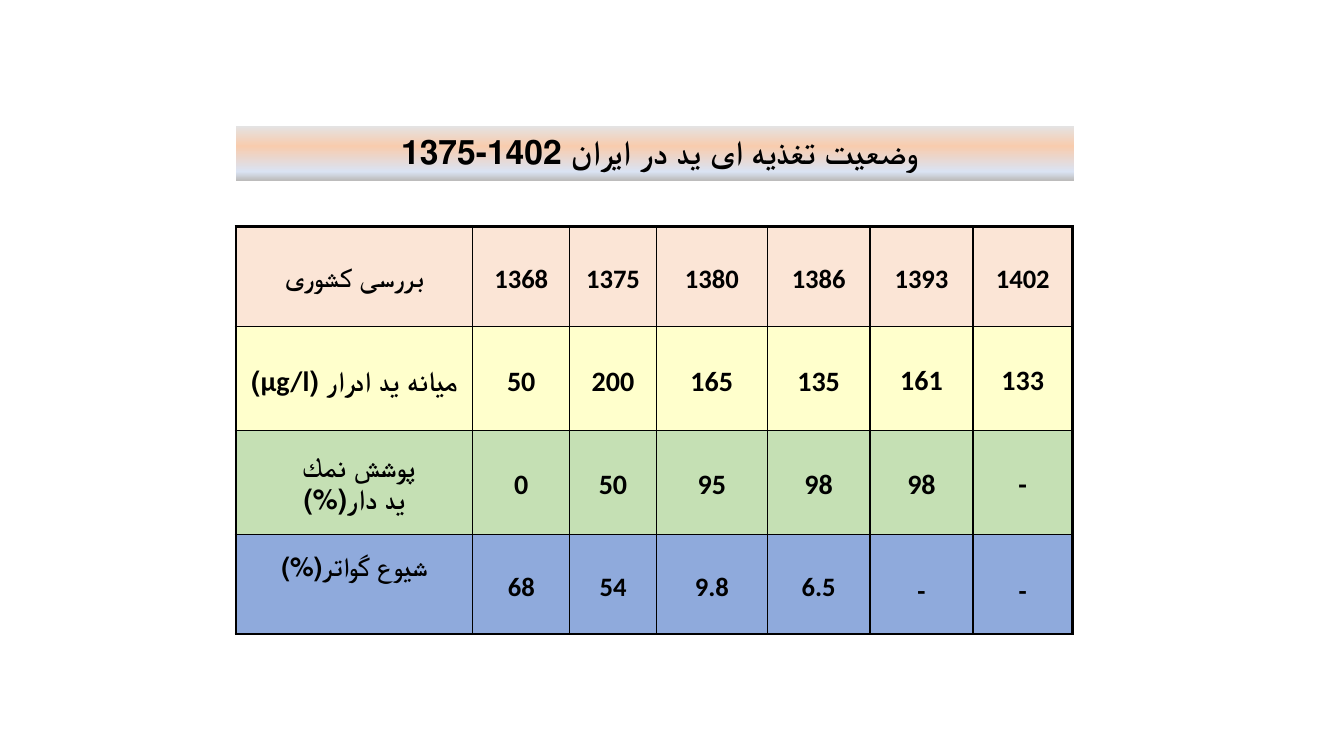
"""Build a slide with a titled table of iodine nutrition surveys in Iran."""
from lxml.etree import SubElement
from pptx import Presentation
from pptx.dml.color import RGBColor
from pptx.enum.shapes import MSO_SHAPE
from pptx.enum.text import MSO_ANCHOR, PP_ALIGN
from pptx.oxml.ns import qn
from pptx.util import Inches, Pt

COLORS = {
    "ink": "000000", "survey": "FBE5D6", "urine": "FFFFCC", "salt": "C5E0B4", "goitre": "8FAADC",
    "silver": "E4E3E3", "peach": "F8CCAE", "ice": "DAE3F3", "gray": "BDBCBC",
}
LEFT, WIDTH = 2.34, 8.31
COLUMNS = [2.35, 0.96, 0.86, 1.1, 1.02, 1.02, 0.99]
ROWS = [
    ("survey", 0.99, 19, ["بررسی کشوری", "1368", "1375", "1380", "1386", "1393", "1402"]),
    ("urine", 1.03, 20, ["ميانه يد ادرار (µg/l)", "50", "200", "165", "135", "161", "133"]),
    ("salt", 1.03, 20, ["پوشش نمك \nيد دار(%)", "0", "50", "95", "98", "98", "-"]),
    ("goitre", 0.99, 19, ["شيوع گواتر(%)", "68", "54", "9.8", "6.5", "-", "-"]),
]
THICK_VERTICALS = {0, 5, 6, 7}
THICK_HORIZONTALS = {0, len(ROWS)}


def write(frame, text, size, spacing, rtl):
    frame.text = text
    for para in frame.paragraphs:
        para.alignment = PP_ALIGN.CENTER
        para.line_spacing = spacing
        para.font.name, para.font.size, para.font.bold = "Calibri", Pt(size), True
        para.font.color.rgb = RGBColor.from_string(COLORS["ink"])
        for span in para.runs:
            span.font.name, span.font.size, span.font.bold = "Calibri", Pt(size), True
            span.font.color.rgb = RGBColor.from_string(COLORS["ink"])
        if rtl:
            para._p.get_or_add_pPr().set("rtl", "1")


def draw_border(cell, side, thick):
    line = SubElement(cell._tc.get_or_add_tcPr(), qn(f"a:ln{side}"), w=str(Pt(2.25 if thick else 1)))
    SubElement(SubElement(line, qn("a:solidFill")), qn("a:srgbClr"), val=COLORS["ink"])


deck = Presentation()
deck.slide_width, deck.slide_height = Inches(13.33), Inches(7.5)
page = deck.slides.add_slide(deck.slide_layouts[6])

height = sum(row[1] for row in ROWS)
table = page.shapes.add_table(
    len(ROWS), len(COLUMNS), Inches(LEFT), Inches(2.25), Inches(WIDTH), Inches(height)).table
for column, width in zip(table.columns, COLUMNS):
    column.width = Inches(width)

for r, (color, row_height, size, texts) in enumerate(ROWS):
    table.rows[r].height = Inches(row_height)
    for c, text in enumerate(texts):
        cell = table.cell(r, c)
        write(cell.text_frame, text, size, 1.15, c == 0 and r > 0)
        cell.vertical_anchor = MSO_ANCHOR.MIDDLE
        side_margin, top_margin = (0.04, 0.01) if c < 5 else (0, 0)
        cell.margin_left = cell.margin_right = Inches(side_margin)
        cell.margin_top, cell.margin_bottom = Inches(top_margin), 0
        for side, thick in (("L", c in THICK_VERTICALS), ("R", c + 1 in THICK_VERTICALS),
                            ("T", r in THICK_HORIZONTALS), ("B", r + 1 in THICK_HORIZONTALS)):
            draw_border(cell, side, thick)
        cell.fill.solid()
        cell.fill.fore_color.rgb = RGBColor.from_string(COLORS[color])

table.cell(3, 0).margin_bottom = Inches(0.36)
for c in (5, 6):
    table.cell(3, c).margin_top = Inches(0.1)

title = page.shapes.add_shape(
    MSO_SHAPE.RECTANGLE, Inches(LEFT), Inches(1.25), Inches(WIDTH), Inches(0.54))
title.shadow.inherit = False
title.line.fill.background()
title.fill.gradient()
title.fill.gradient_angle = 270
stops = title._element.spPr.find(".//" + qn("a:gsLst"))
for stop in list(stops):
    stops.remove(stop)
for share, color in ((0, "silver"), (37, "peach"), (84, "ice"), (100, "gray")):
    stop = SubElement(stops, qn("a:gs"), pos=str(share * 1000))
    SubElement(stop, qn("a:srgbClr"), val=COLORS[color])

frame = title.text_frame
frame.word_wrap = True
frame.vertical_anchor = MSO_ANCHOR.MIDDLE
frame.margin_left = frame.margin_right = Inches(0.07)
frame.margin_top = frame.margin_bottom = Inches(0.04)
write(frame, "وضعیت تغذیه ای ید در ایران 1402-1375 ", 24, 0.9, True)

deck.save("out.pptx")
